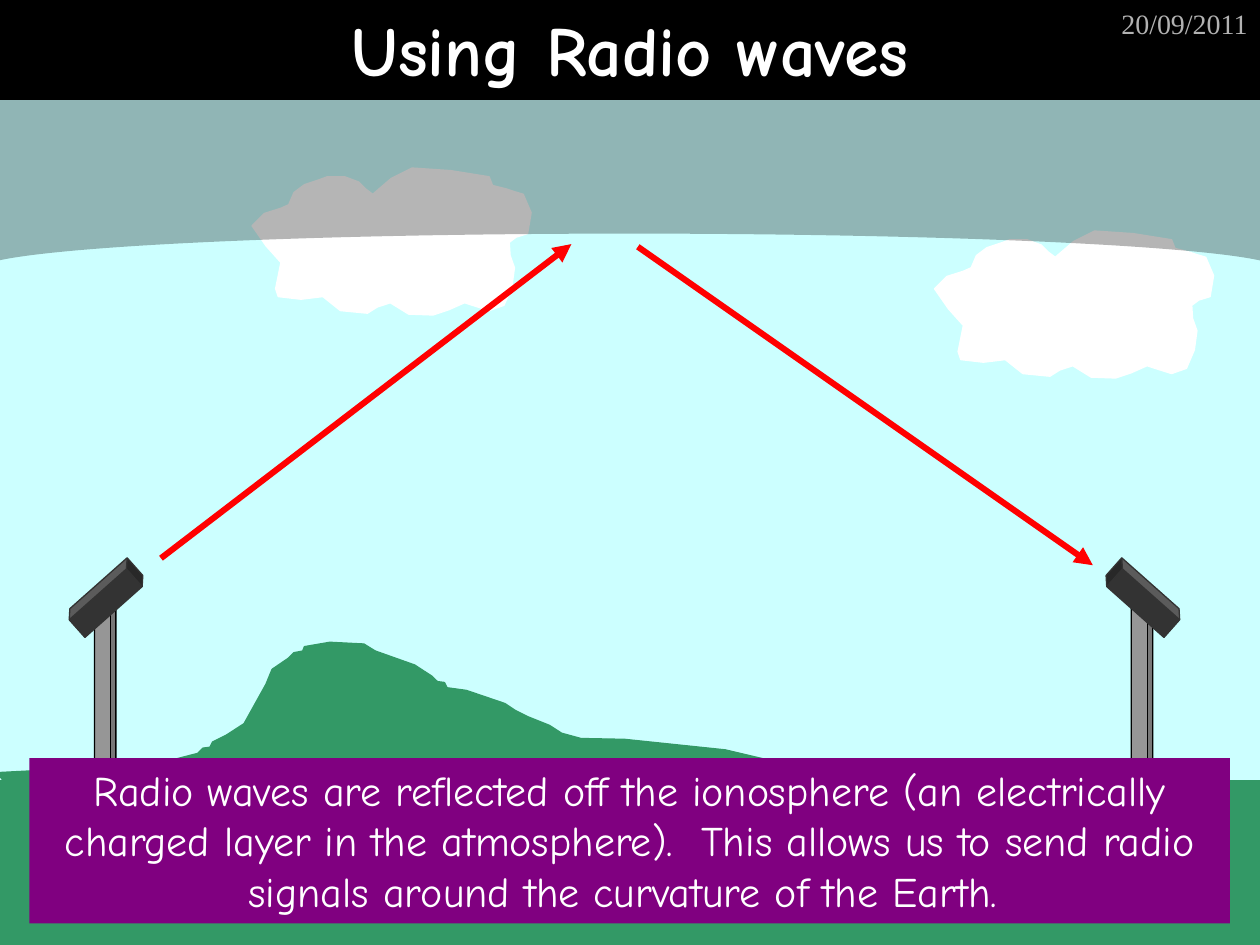
"""Build the slide "Using Radio waves"."""
from dataclasses import dataclass

from lxml.etree import SubElement
from pptx import Presentation
from pptx.dml.color import RGBColor
from pptx.enum.shapes import MSO_CONNECTOR as Connector, MSO_SHAPE as Shape
from pptx.enum.text import MSO_ANCHOR as Anchor, PP_ALIGN as Align
from pptx.oxml.ns import qn
from pptx.util import Pt

CLOUD = [
    (16.5, 54), (8, 44.5), (0, 33), (7, 26), (16.5, 23), (21, 21), (24, 14),
    (30, 9.5), (39, 6.5), (43, 5), (53, 5), (61, 8), (65, 12), (69, 15),
    (79.5, 6), (91.5, 0), (113.5, 1.5), (135.5, 5), (137.5, 10), (145.5, 12),
    (150, 13.5), (155, 15), (159.5, 25.5), (157.5, 37.5), (151, 39.5),
    (147, 42.5), (147.5, 50), (150, 57), (148.5, 68), (144, 78.5),
    (135.5, 81.5), (126, 78.5), (121.5, 77), (112.5, 81), (103.5, 84),
    (89.5, 83.5), (79, 77), (71.5, 79.5), (66, 83), (50.5, 81.5),
    (40.5, 73.5), (28, 75), (15, 73.5), (13.5, 69),
]
HILL = [
    (-1.5, 441.5), (47.5, 439), (78.5, 437), (97.5, 434.5), (113, 430.5),
    (116, 427.5), (120, 427), (121.5, 424), (129.5, 420), (139.5, 413.5),
    (152, 391), (155.5, 382.5), (165, 376), (168, 373), (173, 372),
    (174, 369.5), (188.5, 367), (208, 368), (214.5, 372), (237, 380),
    (247, 386.5), (250, 389.5), (254, 390), (255.5, 393), (266.5, 394.5),
    (288.5, 402), (294.5, 406), (301.5, 409.5), (314, 414.5), (321, 419),
    (332, 422), (357, 422.5), (414.5, 428.5), (442, 435), (456.5, 438.5),
    (510.5, 439), (548.5, 443), (622, 443), (635, 444.5), (711.5, 446.5),
    (715.5, 448), (715.5, 456.5), (695, 469.5), (678, 476.5), (654.5, 486.5),
    (622, 494), (583, 501), (513.5, 507.5), (370, 512), (162, 506),
    (99.5, 498), (67, 494), (58, 490), (49, 476), (28, 467), (19.5, 463.5),
    (6, 452),
]
CAPTION = (
    "Radio waves are reflected off the ionosphere (an electrically charged "
    "layer in the atmosphere).  This allows us to send radio signals around "
    "the curvature of the Earth. "
)


@dataclass(frozen=True)
class Theme:
    """Colours, fonts and sizes of the slide."""
    black: str = "000000"
    white: str = "FFFFFF"
    date: str = "B2B2B2"
    sky: str = "CCFFFF"
    land: str = "339966"
    mast: str = "969696"
    dish: str = "333333"
    wave: str = "FF0000"
    caption: str = "800080"
    font: str = "Comic Neue"
    date_font: str = "Times New Roman"
    title_size: float = 40
    caption_size: float = 24
    date_size: float = 16
    outline: float = 0.75
    wave_width: float = 3.5


def write_text(shape, text, *, font, size, color, bold=False,
               align=Align.CENTER, anchor=Anchor.TOP):
    """Put one formatted paragraph into a shape."""
    frame = shape.text_frame
    frame.word_wrap = True
    frame.vertical_anchor = anchor
    paragraph = frame.paragraphs[0]
    paragraph.alignment = align
    run = paragraph.add_run()
    run.text = text
    run.font.name = font
    run.font.size = Pt(size)
    run.font.bold = bold
    run.font.color.rgb = RGBColor.from_string(color)


class Scene:
    """Draws elements on one slide in one theme."""

    def __init__(self, slide, theme):
        """Keep the slide and theme, and fill the background."""
        self.slide, self.theme = slide, theme
        self.paint(slide.background.fill, theme.black)

    def paint(self, fill, color):
        """Apply a solid colour to a fill."""
        fill.solid()
        fill.fore_color.rgb = RGBColor.from_string(color)

    def finish(self, shape, fill, line):
        """Set fill and outline and drop the shadow."""
        shape.shadow.inherit = False
        self.paint(shape.fill, fill)
        if line:
            self.paint(shape.line.fill, line)
            shape.line.width = Pt(self.theme.outline)
        else:
            shape.line.fill.background()
        return shape

    def preset(self, kind, left, top, width, height, fill, line=None, turn=0):
        """Add a preset shape."""
        shape = self.slide.shapes.add_shape(
            kind, Pt(left), Pt(top), Pt(width), Pt(height))
        shape.rotation = turn
        return self.finish(shape, fill, line)

    def outline(self, points, color, left=0, top=0):
        """Add a closed freeform moved by an offset."""
        moved = [(Pt(left + x), Pt(top + y)) for x, y in points]
        builder = self.slide.shapes.build_freeform(*moved[0])
        builder.add_line_segments(moved[1:], close=True)
        return self.finish(builder.convert_to_shape(), color, color)

    def text(self, text, left, top, width, height, **style):
        """Add a text box."""
        box = self.slide.shapes.add_textbox(
            Pt(left), Pt(top), Pt(width), Pt(height))
        write_text(box, text, **style)

    def arrow(self, *ends):
        """Add a radio wave arrow between two points."""
        line = self.slide.shapes.add_connector(
            Connector.STRAIGHT, *(Pt(value) for value in ends))
        self.paint(line.line.fill, self.theme.wave)
        line.line.width = Pt(self.theme.wave_width)
        SubElement(line.line._get_or_add_ln(), qn("a:tailEnd"), type="triangle")
        SubElement(line._element.spPr, qn("a:effectLst"))

    def antenna(self, left, mirrored=False):
        """Add a mast with a tilted dish."""
        theme = self.theme
        self.preset(Shape.CUBE, left, 335.5, 12.25, 150, theme.mast, theme.black)
        dish = self.preset(Shape.CUBE, left - 17.5, 332.5, 48.25, 18, theme.dish,
                           theme.dish, 41.6 if mirrored else 318.4)
        if mirrored:
            dish._element.spPr.xfrm.set("flipH", "1")

    def ionosphere(self):
        """Add the translucent layer under the header."""
        layer = self.preset(Shape.FLOWCHART_STORED_DATA, 298.8, -278.6, 121.7,
                            743, self.theme.black, turn=90)
        color = layer._element.spPr.find(qn("a:solidFill"))[0]
        SubElement(color, qn("a:alpha"), val="29000")


def main():
    """Compose and save the slide."""
    presentation = Presentation()
    presentation.slide_width, presentation.slide_height = Pt(720), Pt(540)
    slide = presentation.slides.add_slide(presentation.slide_layouts[6])
    theme = Theme()
    scene = Scene(slide, theme)

    scene.text("20/09/2011", 570, 0, 150, 26.5, font=theme.date_font,
               size=theme.date_size, color=theme.date, align=Align.RIGHT)
    scene.preset(Shape.RECTANGLE, 0, 57.5, 720, 400, theme.sky, theme.sky)
    scene.preset(Shape.RECTANGLE, 0, 446.25, 720, 93.75, theme.land, theme.land)
    scene.outline(HILL, theme.land)
    for left, top in ((144, 96), (534, 132)):
        scene.outline(CLOUD, theme.white, left, top)
    scene.antenna(54)
    scene.arrow(92, 319, 326.5, 139.5)
    scene.arrow(364.5, 141, 624.5, 323)
    scene.antenna(646.5, mirrored=True)
    scene.ionosphere()
    scene.text("Using Radio waves", 0, 0, 720, 55, font=theme.font,
               size=theme.title_size, color=theme.white, bold=True,
               anchor=Anchor.MIDDLE)
    caption = scene.preset(Shape.RECTANGLE, 16.75, 433.25, 686, 94.5, theme.caption)
    write_text(caption, CAPTION, font=theme.font, size=theme.caption_size,
               color=theme.white)
    presentation.save("out.pptx")


if __name__ == "__main__":
    main()
